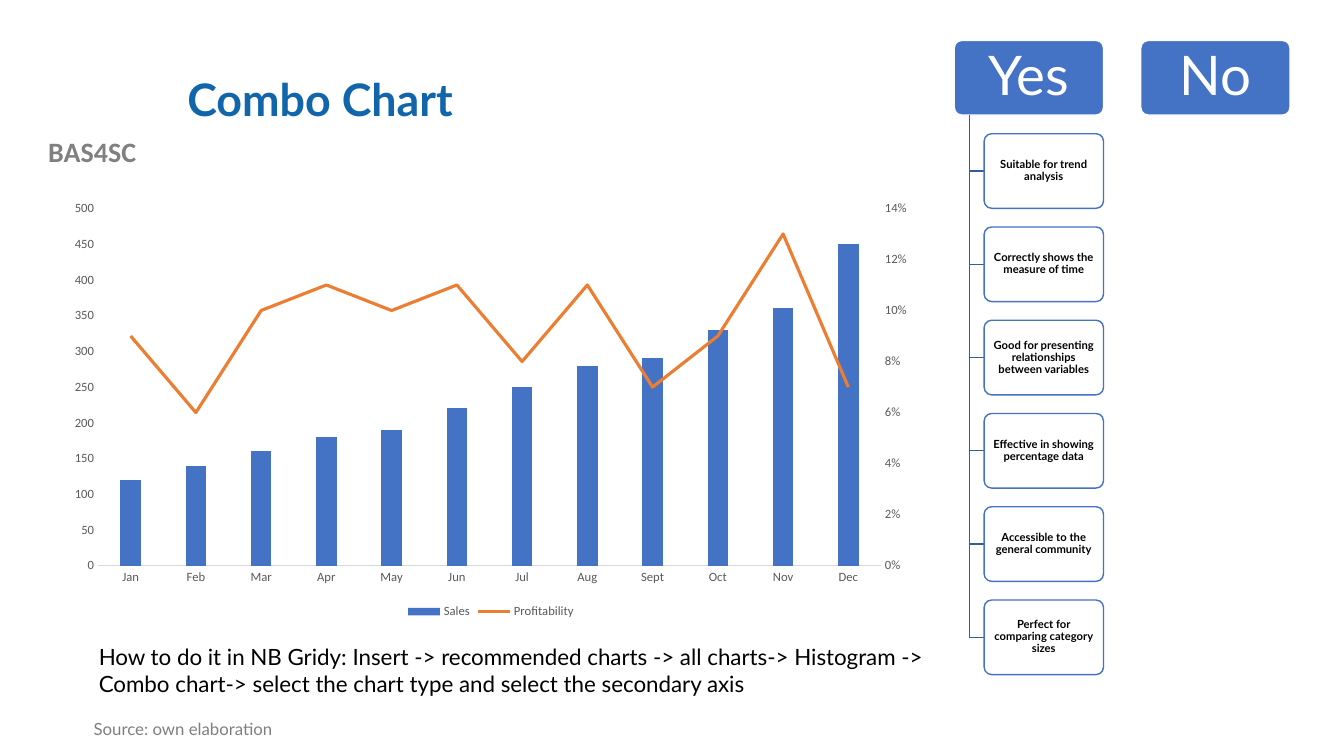
from copy import deepcopy
from dataclasses import dataclass

from lxml import etree
from pptx import Presentation
from pptx import util as u
from pptx.chart import axis as chart_axis, data as chart_data, series as chart_series
from pptx.dml.color import RGBColor
from pptx.enum import chart as ch, shapes, text
from pptx.oxml.ns import qn

TITLE = "Combo Chart"
PROJECT = "BAS4SC"
SOURCE = "Source: own elaboration"
HOW_TO = ("How to do it in NB Gridy: Insert -> recommended charts -> all charts-> Histogram -> "
          "Combo chart-> select the chart type and select the secondary axis")
VERDICTS = [
    ("Yes", ["Suitable for trend analysis",
             "Correctly shows the measure of time",
             "Good for presenting relationships between variables",
             "Effective in showing percentage data",
             "Accessible to the general community",
             "Perfect for comparing category sizes"]),
    ("No", []),
]
MONTHS = ["Jan", "Feb", "Mar", "Apr", "May", "Jun",
          "Jul", "Aug", "Sept", "Oct", "Nov", "Dec"]
SALES = [120, 140, 160, 180, 190, 220, 250, 280, 290, 330, 360, 450]
PROFITABILITY = [0.09, 0.06, 0.1, 0.11, 0.1, 0.11, 0.08, 0.11, 0.07, 0.09, 0.13, 0.07]


@dataclass(frozen=True)
class Theme:
    font: str = "Lato"
    chart_font: str = "Calibri"
    white: str = "FFFFFF"
    black: str = "000000"
    title: str = "1065AB"
    project: str = "808080"
    source: str = "7F7F7F"
    blue: str = "4472C4"
    branch: str = "365B9D"
    orange: str = "ED7D31"
    axis_text: str = "595959"
    axis_line: str = "D9D9D9"
    title_size: float = 32
    verdict_size: float = 39
    project_size: float = 20
    how_to_size: float = 16
    source_size: float = 12
    card_size: float = 8
    chart_size: float = 10
    axis_size: float = 9


THEME = Theme()
rgb = RGBColor.from_string


def style(font, size, color, name=THEME.font, bold=False):
    font.size, font.name, font.bold = u.Pt(size), name, bold
    font.color.rgb = rgb(color)


def write(shape, words, size, color, name=THEME.font, bold=False, spacing=None,
          align=text.PP_ALIGN.LEFT, anchor=text.MSO_ANCHOR.TOP, insets=(0.25, 0.13)):
    """Fill a shape with one paragraph; insets are (sides, top and bottom) in cm."""
    frame = shape.text_frame
    frame.word_wrap, frame.auto_size = True, text.MSO_AUTO_SIZE.NONE
    frame.vertical_anchor = anchor
    frame.margin_left = frame.margin_right = u.Cm(insets[0])
    frame.margin_top = frame.margin_bottom = u.Cm(insets[1])
    para = frame.paragraphs[0]
    para.alignment, para.line_spacing, para.space_before = align, spacing, u.Pt(0)
    span = para.add_run()
    span.text = words
    style(span.font, size, color, name, bold)


def place(shape, *cm):
    shape.left, shape.top, shape.width, shape.height = map(u.Cm, cm)
    return shape


def add_text(page, at, words, size, color, **options):
    write(page.shapes.add_textbox(*map(u.Cm, at)), words, size, color, **options)


def add_rounded(page, at, fill, line, words, size, color, **options):
    box = page.shapes.add_shape(shapes.MSO_SHAPE.ROUNDED_RECTANGLE, *map(u.Cm, at))
    box.adjustments[0] = 0.1
    box.shadow.inherit = False
    box.fill.solid()
    box.fill.fore_color.rgb = rgb(fill)
    box.line.color.rgb, box.line.width = rgb(line), u.Pt(1)
    write(box, words, size, color, spacing=0.9, align=text.PP_ALIGN.CENTER,
          anchor=text.MSO_ANCHOR.MIDDLE, **options)
    return box


def add_branch(page, x, top, bottom, right):
    """Draw an open elbow: down from a heading, then right to a card."""
    builder = page.shapes.build_freeform(u.Cm(x), u.Cm(top))
    builder.add_line_segments([(u.Cm(x), u.Cm(bottom)), (u.Cm(right), u.Cm(bottom))], close=False)
    branch = builder.convert_to_shape()
    branch.shadow.inherit = False
    branch.fill.background()
    branch.line.color.rgb, branch.line.width = rgb(THEME.branch), u.Pt(1)


def add_verdicts(page):
    left, top, width, height = 24.05, 1.02, 3.76, 1.88
    row_step, column_step, card_width = 1.25 * height, 1.25 * width, 0.8 * width
    for column, (verdict, reasons) in enumerate(VERDICTS):
        x = left + column * column_step
        add_rounded(page, (x, top, width, height), THEME.blue, THEME.white,
                    verdict, THEME.verdict_size, THEME.white)
        card_x = x + 0.2 * width
        for row, reason in enumerate(reasons, 1):
            y = top + row * row_step
            add_branch(page, x + 0.1 * width, top + height, y + height / 2, card_x)
            add_rounded(page, (card_x, y, card_width, height), THEME.white, THEME.blue,
                        reason, THEME.card_size, THEME.black, bold=True, insets=(0.1, 0.08))


def format_value_axis(axis, maximum, step, number_format):
    axis.minimum_scale, axis.maximum_scale, axis.major_unit = 0, maximum, step
    axis.tick_labels.number_format = number_format
    axis.tick_labels.number_format_is_linked = False


def put_last_series_on_right_axis(chart):
    """Turn the last column series into a line with its own value axis."""
    area = chart._chartSpace.chart.plotArea
    bars = area.find(qn("c:barChart"))
    series = bars.findall(qn("c:ser"))[-1]
    for tag in series.findall(qn("c:invertIfNegative")):
        series.remove(tag)

    lines = etree.SubElement(area, qn("c:lineChart"))
    bars.addnext(lines)
    etree.SubElement(lines, qn("c:grouping")).set("val", "standard")
    etree.SubElement(lines, qn("c:varyColors")).set("val", "0")
    lines.append(series)
    etree.SubElement(lines, qn("c:marker")).set("val", "1")

    months, values = area.find(qn("c:catAx")), area.find(qn("c:valAx"))
    hidden, right = deepcopy(months), deepcopy(values)
    values.addnext(right)
    right.addnext(hidden)
    for axis, own, other in ((hidden, "5001", "5002"), (right, "5002", "5001")):
        axis.find(qn("c:axId")).set("val", own)
        axis.find(qn("c:crossAx")).set("val", other)
        etree.SubElement(lines, qn("c:axId")).set("val", own)
    right.find(qn("c:axPos")).set("val", "r")
    right.find(qn("c:crosses")).set("val", "max")
    chart_axis.CategoryAxis(hidden).visible = False
    format_value_axis(chart_axis.ValueAxis(right), 0.14, 0.02, "0%")

    profit = chart_series.LineSeries(series)
    profit.smooth = False
    profit.marker.style = ch.XL_MARKER_STYLE.NONE
    profit.format.line.color.rgb = rgb(THEME.orange)
    profit.format.line.width = u.Pt(2.25)


def add_combo_chart(page):
    data = chart_data.CategoryChartData()
    data.categories = MONTHS
    data.add_series("Sales", SALES)
    data.add_series("Profitability", PROFITABILITY, number_format="0%")
    at = map(u.Cm, (1.45, 4.85, 21.84, 10.85))
    chart = page.shapes.add_chart(ch.XL_CHART_TYPE.COLUMN_CLUSTERED, *at, data).chart
    style(chart.font, THEME.chart_size, THEME.black, THEME.chart_font)
    chart.has_title = False
    chart.has_legend = True
    chart.legend.position = ch.XL_LEGEND_POSITION.BOTTOM
    chart.legend.include_in_layout = False
    style(chart.legend.font, THEME.axis_size, THEME.axis_text, THEME.chart_font)

    plot = chart.plots[0]
    plot.gap_width, plot.overlap, plot.vary_by_categories = 219, -27, False
    columns = plot.series[0].format.fill
    columns.solid()
    columns.fore_color.rgb = rgb(THEME.blue)

    for axis in (chart.category_axis, chart.value_axis):
        axis.has_major_gridlines = False
        axis.major_tick_mark = axis.minor_tick_mark = ch.XL_TICK_MARK.NONE
        style(axis.tick_labels.font, THEME.axis_size, THEME.axis_text, THEME.chart_font)
    chart.category_axis.format.line.color.rgb = rgb(THEME.axis_line)
    chart.category_axis.format.line.width = u.Pt(0.75)
    chart.value_axis.format.line.fill.background()
    format_value_axis(chart.value_axis, 500, 50, "General")
    put_last_series_on_right_axis(chart)


def main():
    deck = Presentation()
    deck.slide_width, deck.slide_height = u.Cm(33.87), u.Cm(19.05)
    page = deck.slides.add_slide(deck.slide_layouts[1])
    title, source = page.placeholders
    write(place(title, 4.47, 1.02, 27.08, 3.1), TITLE, THEME.title_size, THEME.title,
          bold=True, spacing=0.9, anchor=text.MSO_ANCHOR.MIDDLE)
    properties = source.text_frame.paragraphs[0]._p.get_or_add_pPr()
    properties.set("marL", "0")
    properties.set("indent", "0")
    etree.SubElement(properties, qn("a:buNone"))
    write(place(source, 2.11, 18.03, 12.73, 0.86), SOURCE, THEME.source_size, THEME.source,
          spacing=0.9)
    add_text(page, (0, 3.25, 4.65, 1.12), PROJECT, THEME.project_size, THEME.project,
             name=THEME.chart_font, bold=True, align=text.PP_ALIGN.CENTER)
    add_verdicts(page)
    add_text(page, (2.24, 16.08, 21.29, 1.63), HOW_TO, THEME.how_to_size, THEME.black)
    add_combo_chart(page)
    deck.save("out.pptx")


if __name__ == "__main__":
    main()
